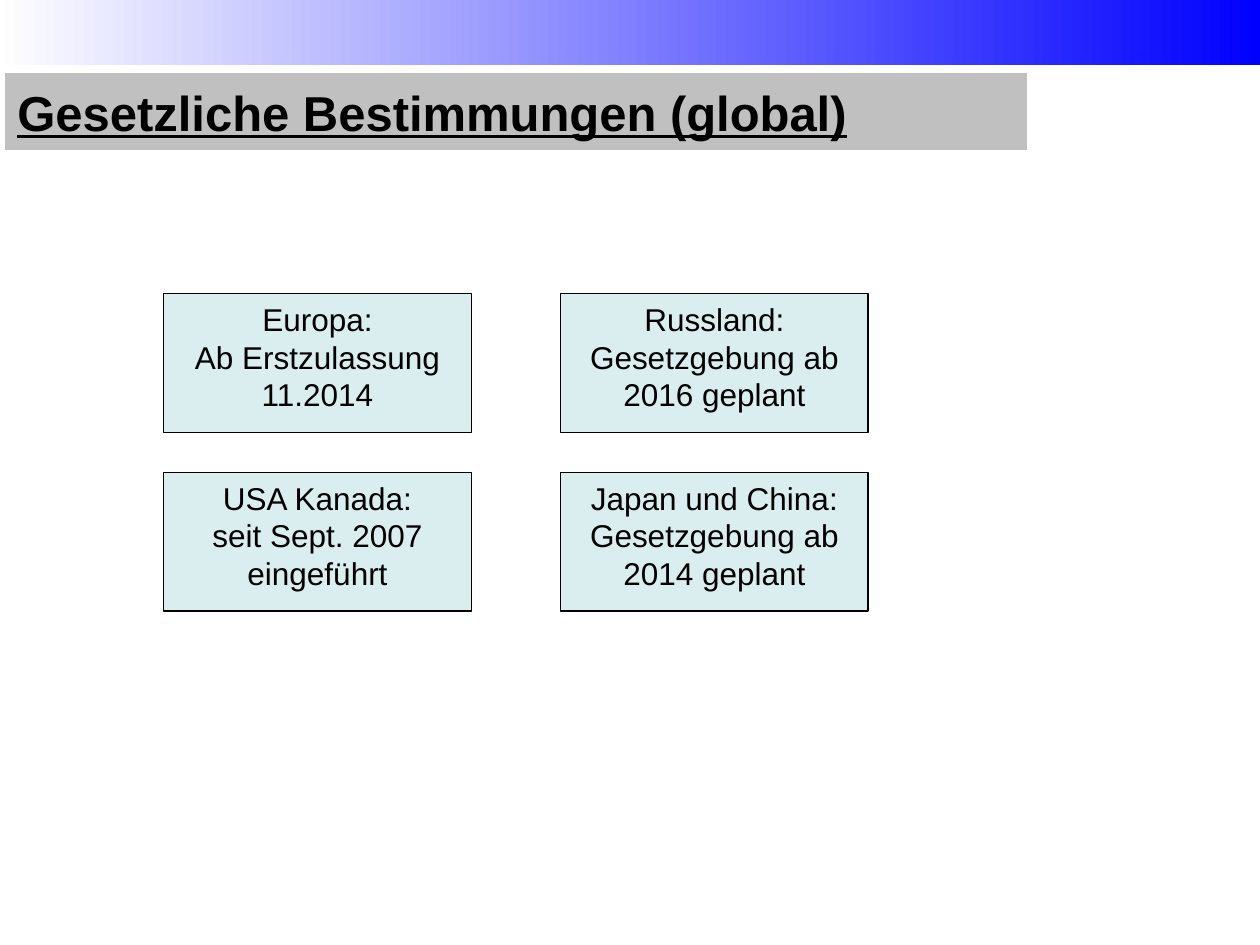
from pptx import Presentation
from pptx.dml.color import RGBColor
from pptx.enum.shapes import MSO_SHAPE
from pptx.enum.text import MSO_ANCHOR, PP_ALIGN
from pptx.util import Pt

RECT = MSO_SHAPE.RECTANGLE
TOP, MIDDLE = MSO_ANCHOR.TOP, MSO_ANCHOR.MIDDLE
LEFT, CENTER = PP_ALIGN.LEFT, PP_ALIGN.CENTER

COLORS = {"pale": "FDFDFF", "blue": "0000FF", "grey": "C0C0C0",
          "mint": "DAEDEF", "black": "000000"}
TITLE = {"name": "Arial", "size": Pt(28), "bold": True, "underline": True}
BODY = {"name": "Arial", "size": Pt(18), "bold": False}

# Regions, row by row
REGIONS = [
    [["Europa:", "Ab Erstzulassung 11.2014"],
     ["Russland: Gesetzgebung ab 2016 geplant"]],
    [["USA Kanada:", "seit Sept. 2007 eingeführt"],
     ["Japan und China: Gesetzgebung ab 2014 geplant"]],
]
GRID_X, GRID_Y = 93.6, 167.8
STEP_X, STEP_Y = 226.8, 102.2
BOX_W, BOX_H = 175.7, 79.2


def color(key):
    return RGBColor.from_string(COLORS[key])


def add_rect(slide, x, y, w, h, fill=None, line=None):
    rect = slide.shapes.add_shape(RECT, Pt(x), Pt(y), Pt(w), Pt(h))
    rect.shadow.inherit = False
    if fill:
        rect.fill.solid()
        rect.fill.fore_color.rgb = color(fill)
    if line:
        rect.line.color.rgb = color(line)
        rect.line.width = Pt(0.75)
    else:
        rect.line.fill.background()
    return rect


def add_fade(slide, x, y, w, h, start, end):
    fill = add_rect(slide, x, y, w, h).fill
    fill.gradient()
    fill.gradient_angle = 0
    for stop, key, pos in zip(fill.gradient_stops, (start, end), (0, 1)):
        stop.color.rgb = color(key)
        stop.position = pos


def set_text(shape, lines, style, align, anchor):
    frame = shape.text_frame
    frame.word_wrap = True
    frame.vertical_anchor = anchor
    frame.text = "\n".join(lines)
    for para in frame.paragraphs:
        para.alignment = align
        font = para.runs[0].font
        font.color.rgb = color("black")
        for name, value in style.items():
            setattr(font, name, value)


def main():
    deck = Presentation()
    deck.slide_width, deck.slide_height = Pt(720), Pt(540)
    slide = deck.slides.add_slide(deck.slide_layouts[6])

    # Header band and title
    add_fade(slide, 2.9, 0, 717.1, 37.4, "pale", "blue")
    title = add_rect(slide, 2.9, 41.8, 583.9, 43.9, "grey")
    set_text(title, ["Gesetzliche Bestimmungen (global)"], TITLE, LEFT, MIDDLE)

    # Grid of regions
    for row, boxes in enumerate(REGIONS):
        for col, lines in enumerate(boxes):
            box = add_rect(slide, GRID_X + col * STEP_X, GRID_Y + row * STEP_Y,
                           BOX_W, BOX_H, "mint", "black")
            set_text(box, lines, BODY, CENTER, TOP)

    deck.save("out.pptx")


if __name__ == "__main__":
    main()
